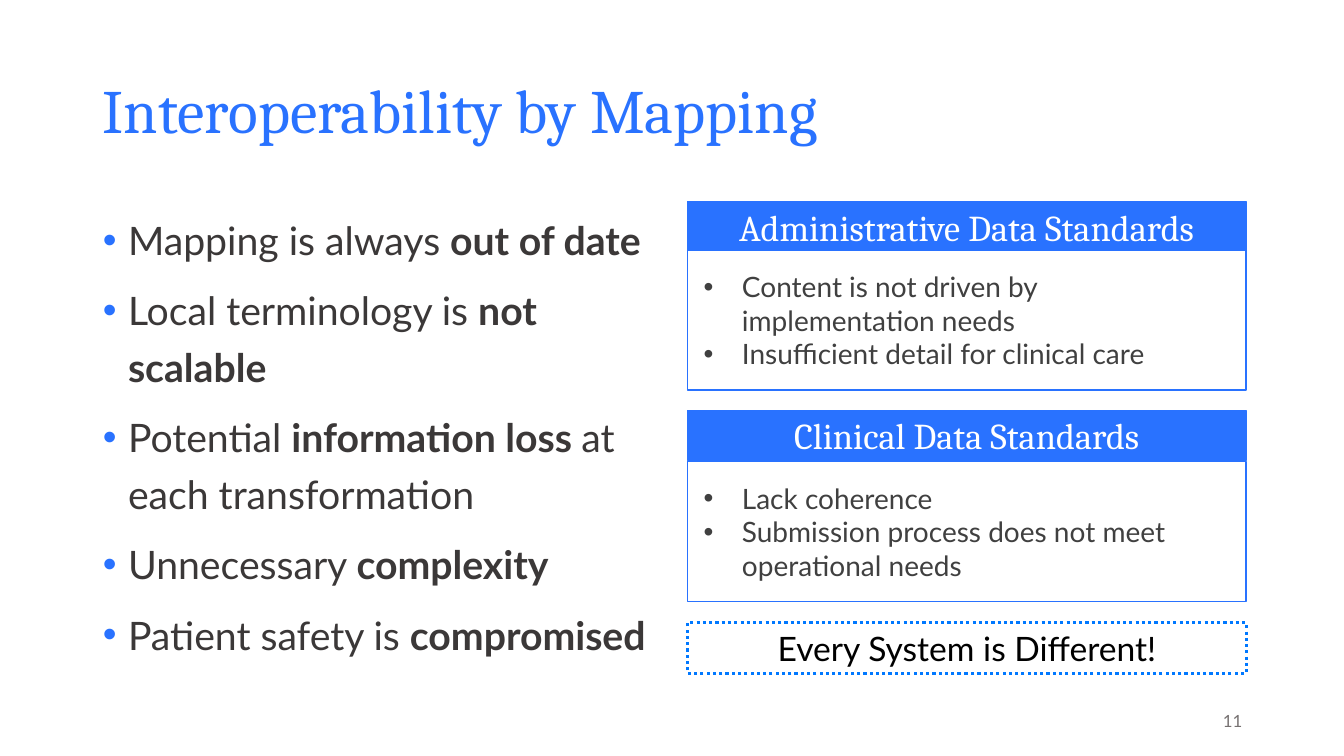
"""Build the slide "Interoperability by Mapping"."""
import lxml.etree
import pptx
import pptx.dml.color
import pptx.enum.dml
import pptx.enum.shapes
import pptx.enum.text
import pptx.oxml.ns
import pptx.util

Inches = pptx.util.Inches
Pt = pptx.util.Pt
RGBColor = pptx.dml.color.RGBColor
ALIGN = pptx.enum.text.PP_ALIGN
MIDDLE = pptx.enum.text.MSO_ANCHOR.MIDDLE

BLUE = RGBColor(0x29, 0x72, 0xFF)
DOTTED_BLUE = RGBColor(0x00, 0x78, 0xFF)
WHITE = RGBColor(0xFF, 0xFF, 0xFF)
BLACK = RGBColor(0x00, 0x00, 0x00)
BODY_GRAY = RGBColor(0x3B, 0x38, 0x38)
CARD_GRAY = RGBColor(0x40, 0x40, 0x40)
NUMBER_GRAY = RGBColor(0x76, 0x71, 0x71)

CARD_LEFT, CARD_WIDTH = 6.82, 5.54


def write(paragraph, text, size, font, color, bold=False, bullet=None):
    """Add one run; bullet is (indent in inches, hanging in inches, color)."""
    if bullet:
        indent, hanging, bullet_color = bullet
        properties = paragraph._p.get_or_add_pPr()
        properties.set("marL", str(Inches(indent)))
        properties.set("indent", str(-Inches(hanging)))
        qn = pptx.oxml.ns.qn
        fill = lxml.etree.SubElement(properties, qn("a:buClr"))
        lxml.etree.SubElement(fill, qn("a:srgbClr"), val=str(bullet_color))
        lxml.etree.SubElement(properties, qn("a:buFont"), typeface="Arial")
        lxml.etree.SubElement(properties, qn("a:buChar"), char="•")
    run = paragraph.add_run()
    run.text = text
    run.font.size = Pt(size)
    run.font.name = font
    run.font.bold = bold
    run.font.color.rgb = color


def add_box(top, height, fill, line, line_width=1):
    """Add a rectangle in the right column and return it."""
    box = slide.shapes.add_shape(
        pptx.enum.shapes.MSO_SHAPE.RECTANGLE,
        Inches(CARD_LEFT), Inches(top), Inches(CARD_WIDTH), Inches(height))
    box.shadow.inherit = False
    box.fill.solid()
    box.fill.fore_color.rgb = fill
    box.line.color.rgb = line
    box.line.width = Pt(line_width)
    box.text_frame.word_wrap = True
    box.text_frame.vertical_anchor = MIDDLE
    return box


presentation = pptx.Presentation()
presentation.slide_width = Inches(13.33)
presentation.slide_height = Inches(7.5)
slide = presentation.slides.add_slide(presentation.slide_layouts[1])

title = slide.shapes.title
title.left, title.top = Inches(0.92), Inches(0.4)
title.width, title.height = Inches(11.5), Inches(1.45)
title.text_frame.vertical_anchor = MIDDLE
heading = title.text_frame.paragraphs[0]
heading.alignment = ALIGN.LEFT
heading.line_spacing = 0.9
write(heading, "Interoperability by Mapping", 44, "Cambria", BLUE)

problems = slide.placeholders[1]
problems.left, problems.top = Inches(0.92), Inches(2)
problems.width, problems.height = Inches(5.67), Inches(4.76)
problems.text_frame.auto_size = pptx.enum.text.MSO_AUTO_SIZE.NONE
problem_texts = [
    ("Mapping is always ", "out of date", ""),
    ("Local terminology is ", "not scalable", ""),
    ("Potential ", "information loss ", "at each transformation"),
    ("Unnecessary ", "complexity", ""),
    ("Patient safety is ", "compromised", ""),
]
for index, (lead, emphasis, rest) in enumerate(problem_texts):
    frame = problems.text_frame
    problem = frame.add_paragraph() if index else frame.paragraphs[0]
    problem.line_spacing = 1.2
    problem.space_before = Pt(10 if index else 0)
    write(problem, lead, 28, "Lato", BODY_GRAY, bullet=(0.25, 0.25, BLUE))
    write(problem, emphasis, 28, "Lato", BODY_GRAY, bold=True)
    if rest:
        write(problem, rest, 28, "Lato", BODY_GRAY)

standards = [
    (2, 2.48, "Administrative Data Standards",
     ["Content is not driven by implementation needs",
      "Insufficient detail for clinical care"]),
    (4.07, 4.58, "Clinical Data Standards",
     ["Lack coherence",
      "Submission process does not meet operational needs"]),
]
for header_top, details_top, name, weaknesses in standards:
    header = add_box(header_top, 0.5, BLUE, BLUE).text_frame.paragraphs[0]
    header.alignment = ALIGN.CENTER
    write(header, name, 26, "Cambria", WHITE)

    details = add_box(details_top, 1.39, WHITE, BLUE).text_frame
    for index, weakness in enumerate(weaknesses):
        item = details.add_paragraph() if index else details.paragraphs[0]
        item.alignment = ALIGN.LEFT
        write(item, weakness, 20, "Lato", CARD_GRAY, bullet=(0.44, 0.38, CARD_GRAY))

page_number = slide.shapes.add_textbox(
    Inches(9.42), Inches(6.95), Inches(3), Inches(0.4)).text_frame
page_number.word_wrap = True
page_number.vertical_anchor = MIDDLE
page_number.paragraphs[0].alignment = ALIGN.RIGHT
write(page_number.paragraphs[0], "11", 12, "Lato", NUMBER_GRAY)

conclusion = add_box(6.18, 0.5, WHITE, DOTTED_BLUE, 2.25)
conclusion.line.dash_style = pptx.enum.dml.MSO_LINE.ROUND_DOT
conclusion_text = conclusion.text_frame.paragraphs[0]
conclusion_text.alignment = ALIGN.CENTER
write(conclusion_text, "Every System is Different!", 24, "Lato", BLACK)

presentation.save("out.pptx")
